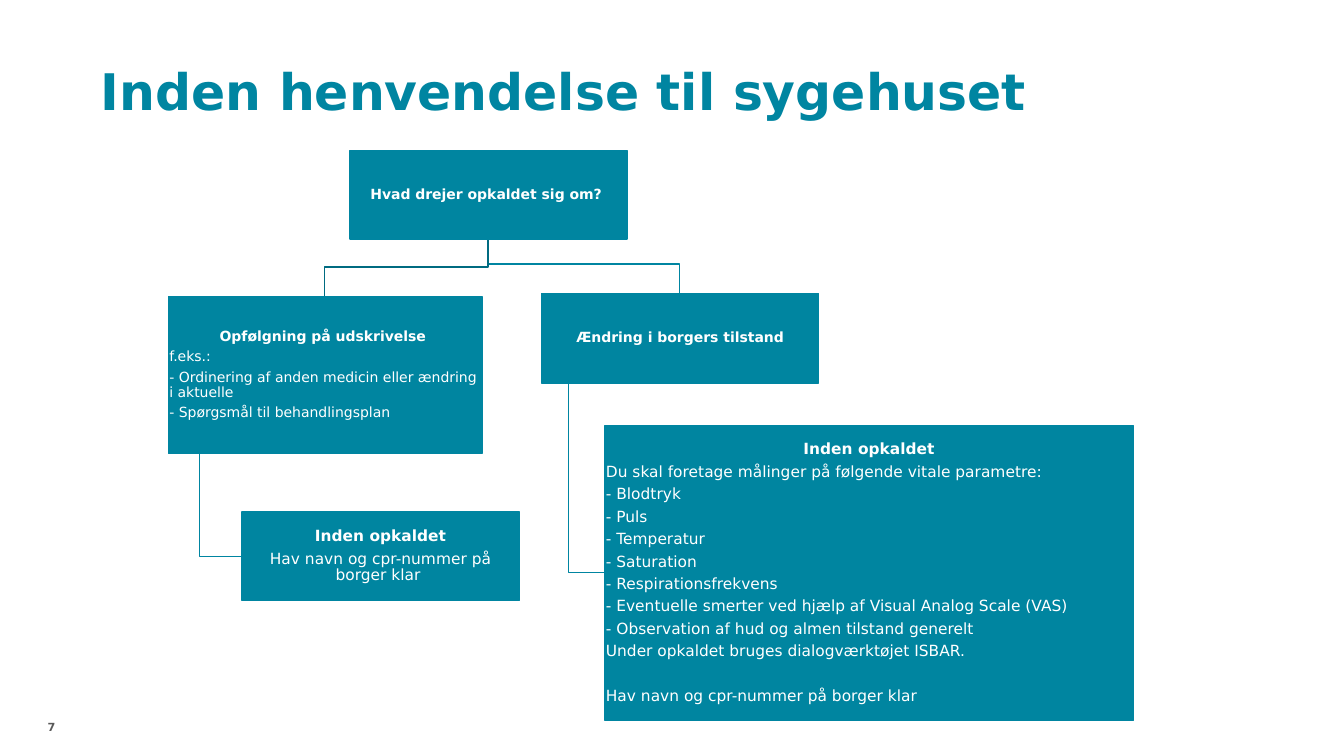
from pptx import Presentation
from pptx.dml.color import RGBColor
from pptx.enum.shapes import MSO_SHAPE as Preset
from pptx.enum.text import MSO_ANCHOR as Anchor, PP_ALIGN as Align
from pptx.util import Pt

PX = 9144  # 100 px to the inch
FONT = "DejaVu Sans"
COLORS = {"box": "0085A0", "line": "0085A1", "dark line": "006B81",
          "white": "FFFFFF", "grey": "595959"}

TITLE = ("Inden henvendelse til sygehuset", (100, 2, 1055, 118))
PAGE_NUMBER = ("7", (16, 715, 39, 35))

# name: (left, top, width, height), text size, heading, alignment of the lines, lines
BOXES = {
    "question": ((347, 149, 275, 88), 10, "Hvad drejer opkaldet sig om? ", Align.LEFT, []),
    "follow-up": ((167, 294, 311, 156), 10, "Opfølgning på udskrivelse ", Align.LEFT, [
        "f.eks.:",
        "- Ordinering af anden medicin eller ændring i aktuelle",
        "- Spørgsmål til behandlingsplan",
    ]),
    "follow-up call": ((240, 508, 275, 88), 11, "Inden opkaldet", Align.CENTER, [
        "Hav navn og cpr-nummer på borger klar ",
    ]),
    "change": ((537, 291, 275, 89), 10, "Ændring i borgers tilstand", Align.LEFT, []),
    "change call": ((600, 422, 524, 293), 11, "Inden opkaldet", Align.LEFT, [
        "Du skal foretage målinger på følgende vitale parametre:",
        "- Blodtryk",
        "- Puls",
        "- Temperatur",
        "- Saturation",
        "- Respirationsfrekvens",
        "- Eventuelle smerter ved hjælp af Visual Analog Scale (VAS)",
        "- Observation af hud og almen tilstand generelt",
        "Under opkaldet bruges dialogværktøjet ISBAR.",
        "Hav navn og cpr-nummer på borger klar",
    ]),
}
SET_APART = ("change call", 10)  # paragraph with a line's gap above it
LINE_PITCH = 15.7

BRANCHES = [("question", "change", "line"), ("question", "follow-up", "dark line")]
HANGING = [("change", "change call"), ("follow-up", "follow-up call")]
BEND = 29  # height of a branch's last leg


def color(name):
    return RGBColor.from_string(COLORS[name])


def emu(lengths):
    return [length * PX for length in lengths]


def set_frame(shape, anchor, inset=0):
    frame = shape.text_frame
    frame.word_wrap = True
    frame.vertical_anchor = anchor
    frame.margin_left = frame.margin_right = inset * PX
    frame.margin_top = frame.margin_bottom = inset * PX
    return frame


def add_run(para, text, size, color_name, bold):
    span = para.add_run()
    span.text = text
    span.font.name = FONT
    span.font.size = Pt(size)
    span.font.bold = bold
    span.font.color.rgb = color(color_name)


def add_label(page, text, place, size, color_name, anchor, align, spacing=1.0):
    frame = set_frame(page.shapes.add_textbox(*emu(place)), anchor)
    para = frame.paragraphs[0]
    para.alignment = align
    para.line_spacing = spacing
    add_run(para, text, size, color_name, True)


def add_path(page, points, color_name):
    """Draw an open line through the points."""
    builder = page.shapes.build_freeform(*points[0], scale=PX)
    builder.add_line_segments(points[1:], close=False)
    line = builder.convert_to_shape()
    line.shadow.inherit = False
    line.fill.background()
    line.line.color.rgb = color(color_name)
    line.line.width = Pt(1)


def add_box(page, name):
    place, size, heading, align, lines = BOXES[name]
    box = page.shapes.add_shape(Preset.RECTANGLE, *emu(place))
    box.shadow.inherit = False
    box.fill.solid()
    box.fill.fore_color.rgb = color("box")
    box.line.color.rgb = color("line")
    box.line.width = Pt(1)
    frame = set_frame(box, Anchor.MIDDLE, 1)
    for index, text in enumerate([heading, *lines]):
        para = frame.add_paragraph() if index else frame.paragraphs[0]
        para.alignment = align if index else Align.CENTER
        para.line_spacing = 0.9
        para.space_after = Pt(size * 0.38)
        if (name, index) == SET_APART:
            para.space_before = Pt(LINE_PITCH)
        add_run(para, text, size, "white", index == 0)


def main():
    deck = Presentation()
    deck.slide_width, deck.slide_height = emu((1333, 750))
    page = deck.slides.add_slide(deck.slide_layouts[6])

    add_label(page, *PAGE_NUMBER, 8, "grey", Anchor.TOP, Align.RIGHT)
    add_label(page, *TITLE, 36, "line", Anchor.BOTTOM, Align.LEFT, 0.9)

    for parent, child, color_name in BRANCHES:
        left, top, width, height = BOXES[parent][0]
        child_left, child_top, child_width, _ = BOXES[child][0]
        start, end = left + width / 2, child_left + child_width / 2
        bend = child_top - BEND
        add_path(page, [(start, top + height), (start, bend), (end, bend), (end, child_top)],
                 color_name)

    for parent, child in HANGING:
        left, top, width, height = BOXES[parent][0]
        child_left, child_top, _, child_height = BOXES[child][0]
        stem, middle = left + width / 10, child_top + child_height / 2
        add_path(page, [(stem, top + height), (stem, middle), (child_left, middle)], "line")

    for name in BOXES:
        add_box(page, name)

    deck.save("out.pptx")


if __name__ == "__main__":
    main()
